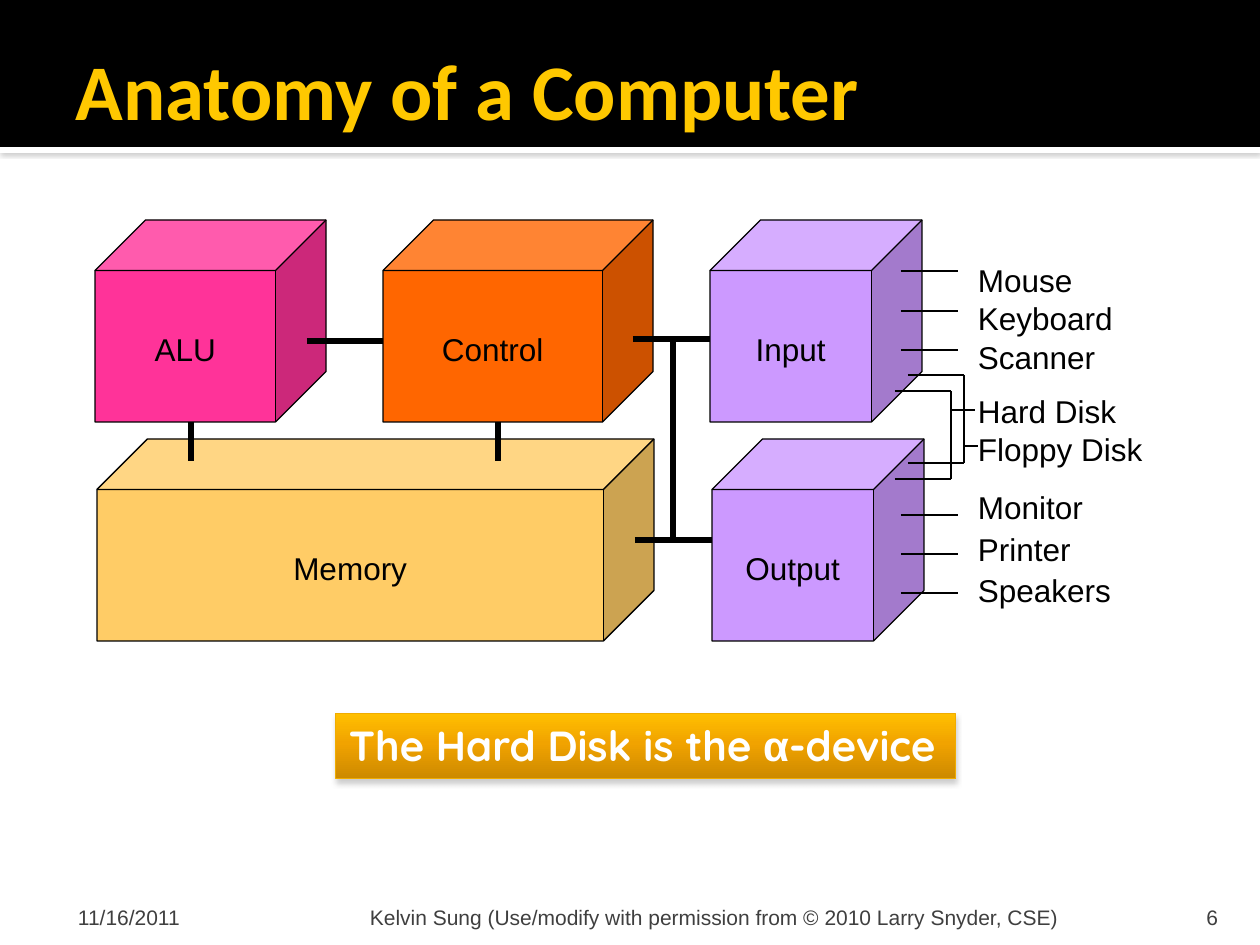
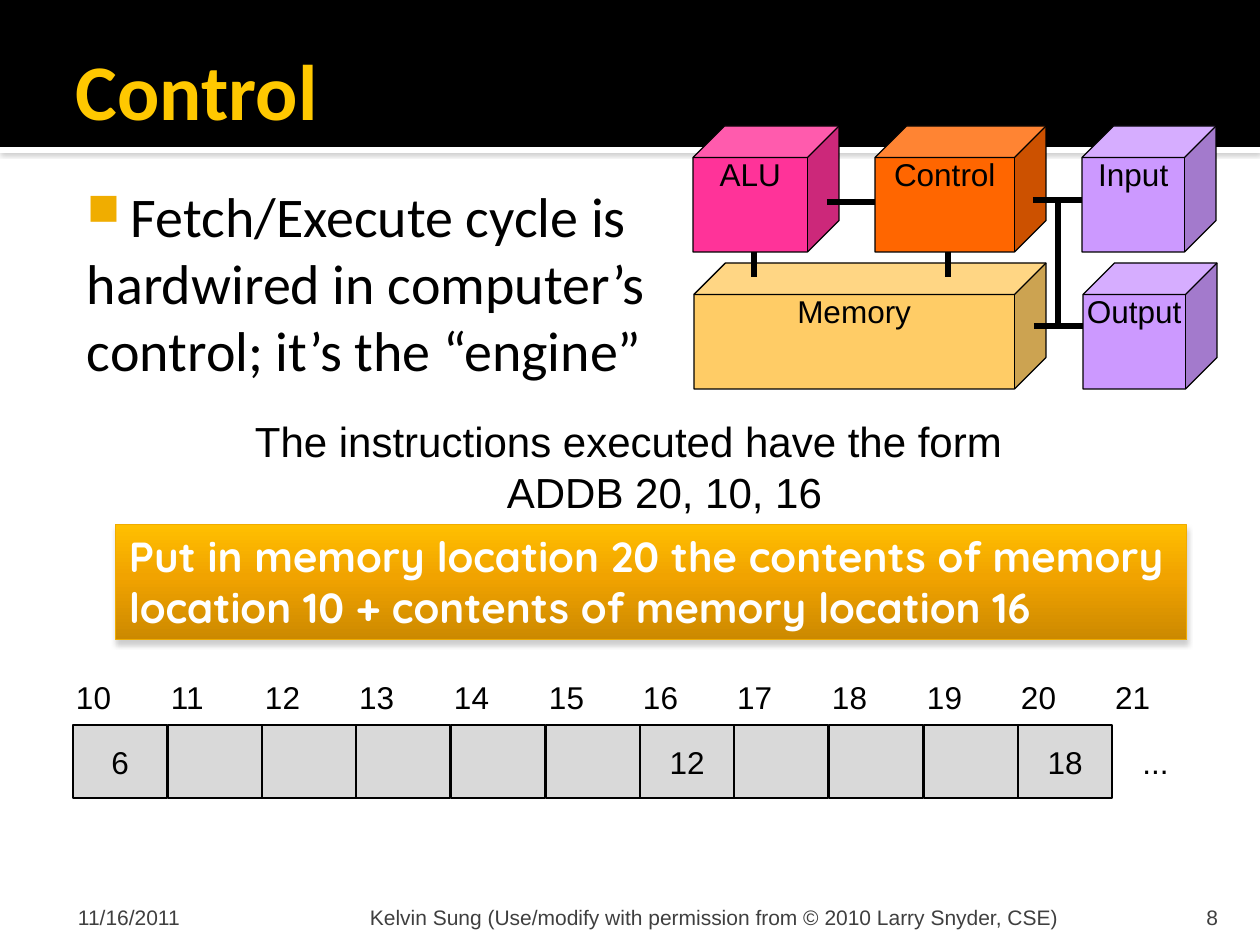
from copy import deepcopy

from lxml import etree
from pptx import Presentation
from pptx import util as u
from pptx.dml.color import RGBColor
from pptx.enum import shapes, text
from pptx.oxml import ns

PX = 914400 / 126
BLACK, WHITE, GOLD, GREY = "000000", "FFFFFF", "FFC800", "3F3F3F"
AMBER, CELL, SHADE, BULLET = "F0AC00", "D9D9D9", "808080", "F0AD00"
GLOW = ((0, "FFBF00"), (0.45, "F1A300"), (1, "CC8900"))
LILAC = "CC99FF"
INSET = (13, 6, 13, 6)
NONE = (0, 0, 0, 0)
TOP, MID, LOW = text.MSO_ANCHOR.TOP, text.MSO_ANCHOR.MIDDLE, text.MSO_ANCHOR.BOTTOM
LEFT, CENTER, RIGHT = text.PP_ALIGN.LEFT, text.PP_ALIGN.CENTER, text.PP_ALIGN.RIGHT

CUBES = (
    ("Memory", "FFCC66", (2, 219, 557, 202)),
    ("Output", LILAC, (617, 219, 212, 202)),
    ("ALU", "FF3399", (0, 0, 231, 202)),
    ("Control", "FF6600", (288, 0, 270, 202)),
    ("Input", LILAC, (615, 0, 212, 202)),
)
WIRES = (
    (212, 121, 288, 121),
    (96, 202, 96, 241),
    (403, 202, 403, 241),
    (578, 119, 578, 320),
    (538, 119, 615, 119),
    (540, 320, 617, 320),
)
DEVICES = (
    ("Mouse", 0), ("Keyboard", 0), ("Scanner", 1), ("Hard Disk", 9),
    ("Floppy Disk", 0), ("Monitor", 12), ("Printer", 2), ("Speakers", 2),
)


def px(n):
    return u.Emu(round(n * PX))


def rgb(code):
    return RGBColor.from_string(code)


def add(parent, tag, **attrs):
    node = etree.SubElement(parent, ns.qn(tag))
    for name, value in attrs.items():
        node.set(name, str(value))
    return node


def style(font, size, face="Arial", color=BLACK, bold=False):
    font.size, font.name, font.bold = u.Pt(size), face, bold
    font.color.rgb = rgb(color)


def write(shape, lines, size, face="Arial", color=BLACK, bold=False,
          align=LEFT, anchor=TOP, inset=INSET):
    frame = shape.text_frame
    frame.word_wrap = True
    frame.vertical_anchor = anchor
    (frame.margin_left, frame.margin_top,
     frame.margin_right, frame.margin_bottom) = map(px, inset)
    for i, line in enumerate(lines):
        para = frame.add_paragraph() if i else frame.paragraphs[0]
        para.add_run().text = line
        para.alignment = align
        style(para.font, size, face, color, bold)
    return frame.paragraphs


def label(tree, area, lines, size, **look):
    box = tree.add_textbox(*map(px, area))
    return write(box, lines, size, **look)


def block(tree, kind, area, fill, edge=None, width=0.75):
    shape = tree.add_shape(kind, *map(px, area))
    shape.shadow.inherit = False
    shape.fill.solid()
    shape.fill.fore_color.rgb = rgb(fill)
    if edge:
        shape.line.color.rgb = rgb(edge)
        shape.line.width = u.Pt(width)
    else:
        shape.line.fill.background()
    return shape


def rect(tree, area, fill, edge=None, width=0.75):
    return block(tree, shapes.MSO_SHAPE.RECTANGLE, area, fill, edge, width)


def shadow(shape, alpha, blur, dist):
    effects = shape.element.spPr.find(ns.qn("a:effectLst"))
    outer = add(effects, "a:outerShdw", blurRad=u.Pt(blur), dist=u.Pt(dist),
                dir=5400000, algn="ctr", rotWithShape=0)
    color = add(outer, "a:srgbClr", val=SHADE)
    add(color, "a:alpha", val=alpha * 1000)


def wire(tree, ends, width):
    line = tree.add_connector(shapes.MSO_CONNECTOR.STRAIGHT, *map(px, ends))
    line.line.color.rgb = rgb(BLACK)
    line.line.width = u.Pt(width)
    add(line.element.spPr, "a:effectLst")


def banner(tree, area):
    shape = rect(tree, area, AMBER, AMBER, 0.5)
    shape.fill.gradient()
    shape.fill.gradient_angle = 270
    stops = shape.element.spPr.find(".//" + ns.qn("a:gsLst"))
    stops.insert(1, deepcopy(stops[0]))
    for stop, (place, color) in zip(shape.fill.gradient_stops, GLOW):
        stop.position = place
        stop.color.rgb = rgb(color)
    shadow(shape, 38, 3.1, 2)
    return shape


def base(deck, title, number):
    tree = deck.slides.add_slide(deck.slide_layouts[6]).shapes
    shadow(rect(tree, (0, 147, 1260, 6), WHITE), 60, 2.5, 0.8)
    rect(tree, (0, 0, 1260, 147), BLACK)
    foot = dict(color=GREY, anchor=LOW)
    label(tree, (63, 892, 294, 38), ["11/16/2011"], 12,
          inset=(15, 6, 6, 0), **foot)
    label(tree, (364, 892, 759, 38),
          ["Kelvin Sung (Use/modify with permission from © 2010 Larry Snyder, CSE)"],
          12, inset=(6, 6, 6, 0), **foot)
    label(tree, (1130, 892, 101, 38), [str(number)], 12, align=RIGHT,
          inset=(13, 6, 13, 0), **foot)
    label(tree, (63, 21, 1134, 136), [title], 45, face="Calibri", color=GOLD,
          bold=True, anchor=MID, inset=(13, 6, 6, 6))
    return tree


def machine(tree, left, top, wide=1, high=1, drop=0):
    def fit(a, b, c, d):
        return round(a * wide), round(b * high), round(c * wide), round(d * high)

    group = tree.add_group_shape().shapes
    for name, color, area in CUBES:
        x, y, w, h = fit(*area)
        cube = block(group, shapes.MSO_SHAPE.CUBE, (left + x, top + y, w, h),
                     color, BLACK)
        para, = write(cube, [name], 18, align=CENTER, inset=(0, drop, 0, 0))
        para.line_spacing = 0.96
    for ends in WIRES:
        x, y, x2, y2 = fit(*ends)
        wire(group, (left + x, top + y, left + x2, top + y2), 3)


def links(tree):
    group = tree.add_group_shape().shapes
    for y in (271, 311, 350, 515, 554, 593):
        wire(group, (901, y, 958, y), 1)
    for x, x2, y, y2, tap, end in ((895, 951, 391, 479, 410, 975),
                                   (908, 964, 375, 463, 446, 978)):
        wire(group, (x, y, x2, y), 1)
        wire(group, (x, y2, x2, y2), 1)
        wire(group, (x2, y, x2, y2), 1)
        wire(group, (x2, tap, end, tap), 1)


def anatomy(deck):
    tree = base(deck, "Anatomy of a Computer", 6)
    para, = write(banner(tree, (336, 714, 620, 65)), ["The Hard Disk is the "],
                  24, "Quicksand", WHITE, True)
    for part in ("α", "-device"):
        para.add_run().text = part
    para.runs[1].font.name = "Arial"
    names, gaps = zip(*DEVICES)
    paras = label(tree, (978, 261, 188, 365), names, 18, inset=NONE)
    for para, gap in zip(paras, gaps):
        para.space_before = u.Pt(gap)
    machine(tree, 95, 220, drop=62)
    links(tree)


def bullet(para):
    props = para._p.get_or_add_pPr()
    color = etree.Element(ns.qn("a:buClr"))
    add(color, "a:srgbClr", val=BULLET)
    size = etree.Element(ns.qn("a:buSzPct"), val="80000")
    mark = etree.Element(ns.qn("a:buChar"), char="■")
    at = props.index(props.find(ns.qn("a:defRPr")))
    props[at:at] = [color, size, mark]


def indent(para, left, first=0):
    props = para._p.get_or_add_pPr()
    props.set("marL", str(px(left)))
    props.set("indent", str(px(first)))


def memory(tree, first, values):
    group = tree.add_group_shape().shapes
    for i in range(12):
        x = round(73 + 94.5 * i)
        if i < 11:
            cell = rect(group, (x, 725, 94, 73), CELL, BLACK)
            if i in values:
                write(cell, [values[i]], 18, align=CENTER, anchor=MID)
        label(group, (x - 10, 672, 72, 63), [str(first + i)], 18)
    label(group, (1103, 725, 105, 73), ["..."], 18, align=CENTER, anchor=MID)


def control(deck):
    tree = base(deck, "Control", 8)
    paras = label(tree, (63, 168, 1134, 714),
                  ["Fetch/Execute cycle is", "hardwired in computer’s",
                   "control; it’s the “engine”"],
                  32, face="Calibri", inset=(8, 13, 13, 6))
    for para in paras:
        indent(para, 60, -44)
    bullet(paras[0])
    form = label(tree, (242, 410, 780, 115),
                 ["The instructions executed have the form", "ADDB 20, 10, 16"], 24)
    indent(form[1], 252)
    memory(tree, 10, {0: "6", 6: "12", 10: "18"})
    write(banner(tree, (116, 525, 1071, 115)),
          ["Put in memory location 20 the contents of memory "
           "location 10 + contents of memory location 16"],
          24, "Quicksand", WHITE, True)
    machine(tree, 693, 126, 0.632, 0.626)


def main():
    deck = Presentation()
    deck.slide_width, deck.slide_height = px(1260), px(945)
    anatomy(deck)
    control(deck)
    deck.save("out.pptx")


if __name__ == "__main__":
    main()
